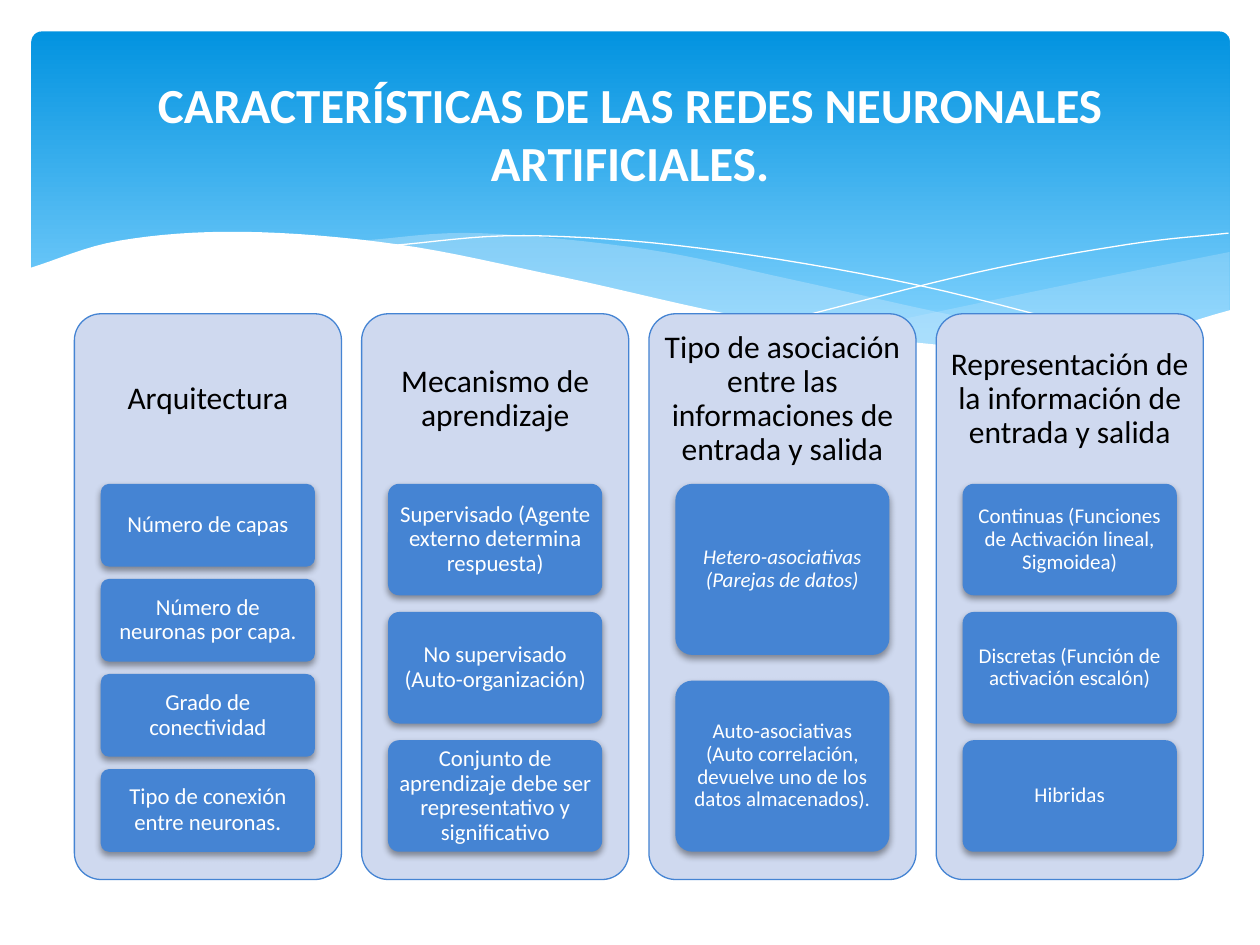
from dataclasses import dataclass

from lxml import etree
from pptx import Presentation
from pptx.dml.color import RGBColor
from pptx.enum.shapes import MSO_SHAPE
from pptx.enum.text import MSO_ANCHOR, PP_ALIGN
from pptx.oxml.ns import qn
from pptx.util import Inches, Pt

ROUND = MSO_SHAPE.ROUNDED_RECTANGLE
MIDDLE = MSO_ANCHOR.MIDDLE
CENTER = PP_ALIGN.CENTER
WHITE = RGBColor(0xFF, 0xFF, 0xFF)
BLACK = RGBColor(0, 0, 0)
BLUE = RGBColor(0x45, 0x84, 0xD3)
PALE = RGBColor(0xCF, 0xD9, 0xEF)
MIST = RGBColor(0xC6, 0xE7, 0xFC)
SKY_TOP = RGBColor(0x02, 0x93, 0xE0)
SKY_LOW = RGBColor(0x83, 0xD3, 0xFE)
FONT = "Calibri"

LEFT, TOP, PITCH = 0.59, 2.49, 2.28
WIDTH, HEIGHT, HEAD = 2.12, 4.49, 1.35
CARD_LEFT, CARD_WIDTH, STACK, GAP = 0.21, 1.7, 2.92, 0.15
STEPS = 8

Spot = tuple[float, float]


@dataclass
class Card:
    text: str
    tail: str = ""
    italic: bool = False


@dataclass
class Column:
    title: str
    size: int
    cards: list[Card]


@dataclass
class Wave:
    edges: list[list[Spot]]
    fill: RGBColor | None = None
    alpha: int = 100


WAVES = [
    Wave([[(9.76, 2), (8.61, 2.23), (6.61, 2.65)],
          [(6.61, 2.65), (7.57, 2.76), (8.35, 2.77), (9.05, 2.69), (9.76, 2.47)]],
         MIST, 29),
    Wave([[(8.93, 2.73), (7.75, 2.54), (6.29, 2.22), (5.14, 1.98), (3.8, 1.85),
           (2.86, 1.91)],
          [(2.86, 1.91), (4.49, 2.22), (6.34, 2.61), (7.85, 2.78), (8.93, 2.73)]],
         MIST, 40),
    Wave([[(3.09, 1.95), (4.16, 1.87), (5.56, 1.97), (7.27, 2.26), (9.07, 2.72)]]),
    Wave([[(6.13, 2.57), (7.76, 2.16), (8.95, 1.94), (9.75, 1.85)]]),
    Wave([[(9.77, 2.46), (8.75, 2.73), (7.61, 2.75), (6.03, 2.54), (4.47, 2.2),
           (3.16, 1.94), (1.93, 1.84), (0.95, 1.91), (0.23, 2.13)],
          [(0.23, 3.29), (9.77, 3.29)]], WHITE),
]

COLUMNS = [
    Column("Arquitectura", 13, [
        Card("Número de capas"),
        Card("Número de neuronas por capa."),
        Card("Grado de conectividad"),
        Card("Tipo de conexión entre neuronas", "."),
    ]),
    Column("Mecanismo de aprendizaje", 13, [
        Card("Supervisado (Agente externo determina respuesta)"),
        Card("No supervisado (Auto-organización)"),
        Card("Conjunto de aprendizaje debe ser representativo y significativo"),
    ]),
    Column("Tipo de asociación entre las informaciones de entrada y salida", 12, [
        Card("Hetero-asociativas (Parejas de datos)", italic=True),
        Card("Auto-asociativas (Auto correlación, devuelve uno de los datos "
             "almacenados)."),
    ]),
    Column("Representación de la información de entrada y salida", 12, [
        Card("Continuas (Funciones de Activación lineal, Sigmoidea)"),
        Card("Discretas (Función de activación escalón)"),
        Card("Hibridas"),
    ]),
]


def blend(a: float, b: float, c: float, d: float, t: float) -> float:
    bend = (2 * a - 5 * b + 4 * c - d) * t + (3 * b - a - 3 * c + d) * t * t
    return b + (c - a + bend) * t / 2


def smooth(knots: list[Spot]) -> list[Spot]:
    if len(knots) == 2:
        return knots
    first, last = ((2 * p[0] - q[0], 2 * p[1] - q[1])
                   for p, q in (knots[:2], knots[:-3:-1]))
    full = [first, *knots, last]
    curve = [tuple(blend(*axis, step / STEPS) for axis in zip(*full[i:i + 4]))
             for i in range(len(knots) - 1) for step in range(STEPS)]
    return curve + knots[-1:]


def style(run, size: int, color: RGBColor, bold=False, italic=False) -> None:
    font = run.font
    font.name, font.size = FONT, Pt(size)
    font.bold, font.italic = bold, italic
    font.color.rgb = color


def write(shape, text: str, size: int, color: RGBColor, inset: float,
          space=0.9, bold=False, italic=False):
    frame = shape.text_frame
    frame.word_wrap = True
    frame.vertical_anchor = MIDDLE
    frame.margin_left = frame.margin_right = Inches(inset)
    frame.margin_top = frame.margin_bottom = Inches(inset)
    para = frame.paragraphs[0]
    para.text = text
    para.alignment = CENTER
    para.line_spacing = space
    style(para.runs[0], size, color, bold, italic)
    return para


def add_round(shapes, x: float, y: float, w: float, h: float, curve: float):
    shape = shapes.add_shape(ROUND, Inches(x), Inches(y), Inches(w), Inches(h))
    shape.adjustments[0] = curve
    shape.shadow.inherit = False
    shape.line.fill.background()
    return shape


def add_text(shapes, x: float, y: float, w: float, h: float):
    return shapes.add_textbox(Inches(x), Inches(y), Inches(w), Inches(h))


def add_wave(shapes, wave: Wave) -> None:
    spots = [(Inches(x), Inches(y)) for edge in wave.edges for x, y in smooth(edge)]
    pen = shapes.build_freeform(*spots[0], scale=1.0)
    pen.add_line_segments(spots[1:], close=wave.fill is not None)
    shape = pen.convert_to_shape()
    shape.shadow.inherit = False
    if wave.fill is None:
        shape.fill.background()
        shape.line.color.rgb = WHITE
        shape.line.width = Pt(0)
        return
    shape.fill.solid()
    shape.fill.fore_color.rgb = wave.fill
    shape.line.fill.background()
    if wave.alpha < 100:
        tint = shape.element.spPr.find(qn("a:solidFill")).find(qn("a:srgbClr"))
        etree.SubElement(tint, qn("a:alpha"), val=str(wave.alpha * 1000))


def add_shade(shape) -> None:
    effect = shape.element.spPr.find(qn("a:effectLst"))
    shade = etree.SubElement(effect, qn("a:outerShdw"), blurRad=str(Pt(4)),
                             dist=str(Pt(2)), dir="5400000", rotWithShape="0")
    tint = etree.SubElement(shade, qn("a:srgbClr"), val=str(BLACK))
    etree.SubElement(tint, qn("a:alpha"), val="38000")


def add_card(shapes, card: Card, size: int, x: float, y: float, h: float) -> None:
    shape = add_round(shapes, x, y, CARD_WIDTH, h, 0.1)
    shape.fill.solid()
    shape.fill.fore_color.rgb = BLUE
    add_shade(shape)
    para = write(shape, card.text, size, WHITE, 0.06, italic=card.italic)
    if card.tail:
        run = para.add_run()
        run.text = card.tail
        style(run, size + 1, WHITE)


def add_column(shapes, column: Column, x: float) -> None:
    panel = add_round(shapes, x, TOP, WIDTH, HEIGHT, 0.1)
    panel.fill.solid()
    panel.fill.fore_color.rgb = PALE
    panel.line.color.rgb = BLUE
    panel.line.width = Pt(0.75)
    write(add_text(shapes, x, TOP, WIDTH, HEAD), column.title, 18, BLACK, 0.07)
    count = len(column.cards)
    tall = STACK / (count + GAP * (count - 1))
    for i, card in enumerate(column.cards):
        y = TOP + HEAD + i * tall * (1 + GAP)
        add_card(shapes, card, column.size, x + CARD_LEFT, y, tall)


def main() -> None:
    deck = Presentation()
    deck.slide_width, deck.slide_height = Inches(10), Inches(7.5)
    shapes = deck.slides.add_slide(deck.slide_layouts[6]).shapes
    sky = add_round(shapes, 0.25, 0.25, 9.51, 2.7, 0.03)
    sky.fill.gradient()
    sky.fill.gradient_angle = 270
    for stop, color, place in zip(sky.fill.gradient_stops, (SKY_TOP, SKY_LOW), (0, 0.9)):
        stop.color.rgb = color
        stop.position = place
    for wave in WAVES:
        add_wave(shapes, wave)
    write(add_text(shapes, 0.5, 0.37, 9, 1.37),
          "CARACTERÍSTICAS DE LAS REDES NEURONALES ARTIFICIALES.",
          28, WHITE, 0.1, space=1.0, bold=True)
    for i, column in enumerate(COLUMNS):
        add_column(shapes, column, LEFT + i * PITCH)
    deck.save("out.pptx")


if __name__ == "__main__":
    main()
